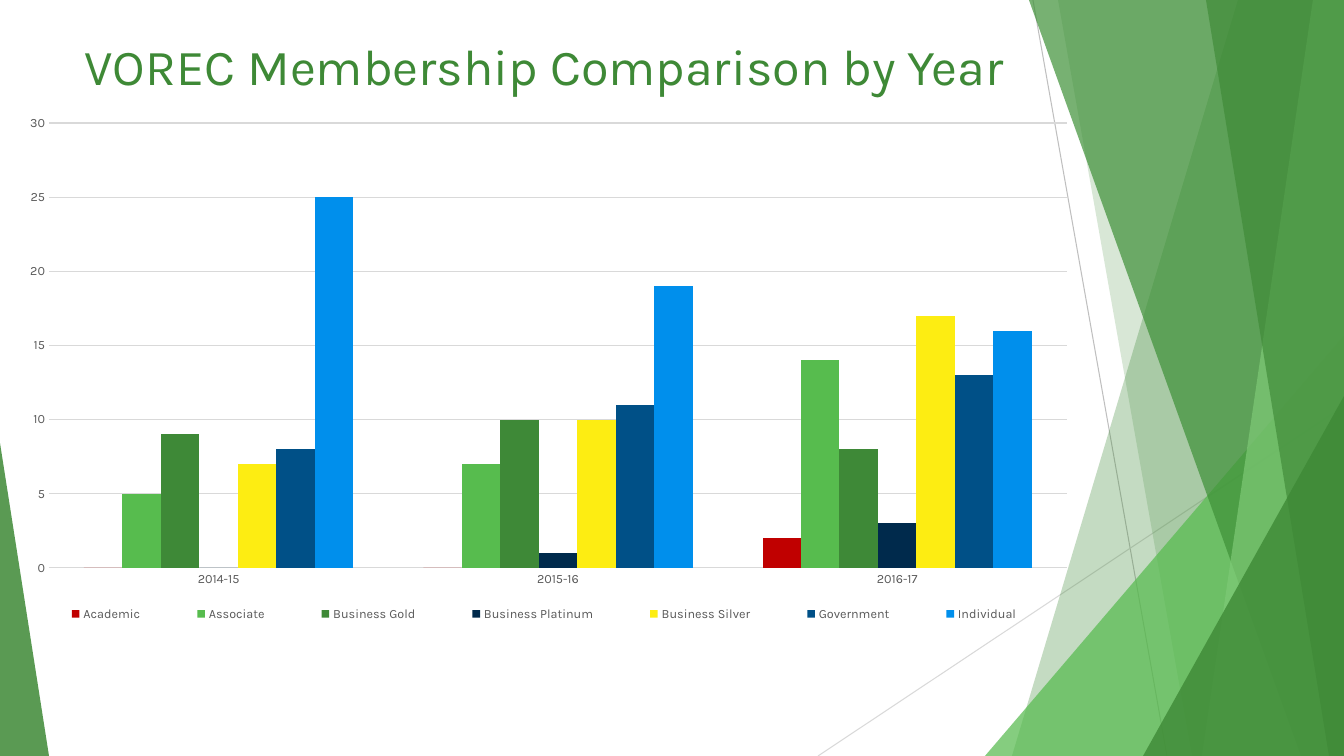
from lxml.etree import SubElement
from pptx import Presentation
from pptx.chart.data import CategoryChartData
from pptx.dml.color import RGBColor
from pptx.enum.chart import XL_CHART_TYPE as ChartType, XL_LEGEND_POSITION as LegendPosition
from pptx.enum.chart import XL_TICK_MARK as TickMark
from pptx.enum.shapes import MSO_CONNECTOR as Connector, MSO_SHAPE as Shape
from pptx.enum.text import MSO_ANCHOR as Anchor, PP_ALIGN as Align
from pptx.oxml import parse_xml
from pptx.oxml.ns import nsdecls, qn
from pptx.util import Pt

PX = 914400 / 100.8
WIDTH, HEIGHT = 1344, 756
FONT = "Karla"

FOREST = RGBColor(0x3E, 0x89, 0x36)
FERN = RGBColor(0x3E, 0x90, 0x37)
LEAF = RGBColor(0x56, 0xBB, 0x4E)
MINT = RGBColor(0x7E, 0xC9, 0x76)
GREY = RGBColor(0xBF, 0xBF, 0xBF)
PALE_GREY = RGBColor(0xD9, 0xD9, 0xD9)
TEXT_GREY = RGBColor(0x59, 0x59, 0x59)

TITLE = "VOREC Membership Comparison by Year"
TITLE_BOX = (75, 25, 947, 81)
YEARS = ["2014-15", "2015-16", "2016-17"]
MEMBERS = [
    ("Academic", (0, 0, 2), RGBColor(0xC0, 0x00, 0x00)),
    ("Associate", (5, 7, 14), RGBColor(0x57, 0xBC, 0x4E)),
    ("Business Gold", (9, 10, 8), RGBColor(0x3E, 0x89, 0x37)),
    ("Business Platinum", (0, 1, 3), RGBColor(0x00, 0x2A, 0x4C)),
    ("Business Silver", (7, 10, 17), RGBColor(0xFD, 0xED, 0x12)),
    ("Government", (8, 11, 13), RGBColor(0x00, 0x50, 0x87)),
    ("Individual", (25, 19, 16), RGBColor(0x00, 0x8F, 0xEC)),
]
CHART_BOX = (9, 106, 1080, 522)
PLOT_BOX = (49, 123, 1018, 445)
LEGEND_BOX = (19, 602, 1050, 24)

# Lines: start, end, colour
LINES = [((1033, 0), (1167, HEIGHT), GREY), ((WIDTH, 406), (818, HEIGHT), PALE_GREY)]
# Bands reach the right edge: top-left x, bottom-left x, colour, opacity in percent
BACK_BANDS = [(1238, 1012, FOREST, 30), (1058, 1192, FOREST, 20)]
FRONT_BANDS = [(1029, 1301, FERN, 70), (1313, 1202, MINT, 70), (1206, 1329, FOREST, 65)]
# Triangles stand on the bottom edge: left, top, width, apex, colour, opacity
BACK_TRIANGLES = [(985, 336, 359, 1, LEAF, 72)]
FRONT_TRIANGLES = [(1143, 396, 201, 1, FOREST, 80), (0, 443, 49, 0, FOREST, 85)]


def emu(*lengths):
    return [round(length * PX) for length in lengths]


def paint(shape, color, opacity):
    shape.shadow.inherit = False
    shape.fill.solid()
    shape.fill.fore_color.rgb = color
    shape.line.fill.background()
    color_xml = shape.fill._xPr.find(qn("a:solidFill"))[0]
    SubElement(color_xml, qn("a:alpha"), val=str(opacity * 1000))


def add_line(shapes, start, end, color):
    line = shapes.add_connector(Connector.STRAIGHT, *emu(*start, *end))
    line.line.color.rgb = color
    line.line.width = Pt(0.75)
    SubElement(line._element.spPr, qn("a:effectLst"))


def add_band(shapes, top_x, bottom_x, color, opacity):
    builder = shapes.build_freeform(top_x, 0, scale=PX)
    builder.add_line_segments([(WIDTH, 0), (WIDTH, HEIGHT), (bottom_x, HEIGHT)], close=True)
    paint(builder.convert_to_shape(), color, opacity)


def add_triangle(shapes, left, top, width, apex, color, opacity):
    box = emu(left, top, width, HEIGHT - top)
    triangle = shapes.add_shape(Shape.ISOSCELES_TRIANGLE, *box)
    triangle.adjustments[0] = apex
    paint(triangle, color, opacity)


def set_font(font, size, color):
    for name, value in {"name": FONT, "size": Pt(size)}.items():
        setattr(font, name, value)
    font.color.rgb = color


def add_title(shapes):
    frame = shapes.add_textbox(*emu(*TITLE_BOX)).text_frame
    frame.word_wrap = True
    frame.vertical_anchor = Anchor.MIDDLE
    paragraph = frame.paragraphs[0]
    paragraph.alignment = Align.LEFT
    run = paragraph.add_run()
    run.text = TITLE
    set_font(run.font, 36, FOREST)


def place_in_chart(parent, index, box, target=""):
    """Fix a chart part at a px box, written as fractions of the chart."""
    for layout in parent.findall(qn("c:layout")):
        parent.remove(layout)
    left, top, width, height = CHART_BOX
    fractions = {
        "x": (box[0] - left) / width,
        "y": (box[1] - top) / height,
        "w": box[2] / width,
        "h": box[3] / height,
    }
    layout = parse_xml(f"<c:layout {nsdecls('c')}><c:manualLayout/></c:layout>")
    manual = layout[0]
    if target:
        SubElement(manual, qn("c:layoutTarget"), val=target)
    for mode in ("xMode", "yMode"):
        SubElement(manual, qn(f"c:{mode}"), val="edge")
    for name, value in fractions.items():
        SubElement(manual, qn(f"c:{name}"), val=f"{value:.4f}")
    parent.insert(index, layout)


def add_member_chart(shapes):
    data = CategoryChartData(number_format="0")
    data.categories = YEARS
    for name, values, _ in MEMBERS:
        data.add_series(name, values)
    chart = shapes.add_chart(ChartType.COLUMN_CLUSTERED, *emu(*CHART_BOX), data).chart
    chart.has_title = False
    set_font(chart.font, 9, TEXT_GREY)

    plot = chart.plots[0]
    for name, value in {"gap_width": 182, "overlap": 0, "vary_by_categories": False}.items():
        setattr(plot, name, value)
    for series, (_, _, color) in zip(plot.series, MEMBERS):
        series.format.fill.solid()
        series.format.fill.fore_color.rgb = color

    years, counts = chart.category_axis, chart.value_axis
    for axis in (years, counts):
        axis.major_tick_mark = axis.minor_tick_mark = TickMark.NONE
        set_font(axis.tick_labels.font, 9, TEXT_GREY)
    for name, value in {"minimum_scale": 0, "maximum_scale": 30, "major_unit": 5}.items():
        setattr(counts, name, value)
    counts.format.line.fill.background()
    for line in (years.format.line, counts.major_gridlines.format.line):
        line.color.rgb = PALE_GREY
        line.width = Pt(0.75)

    chart.has_legend = True
    legend = chart.legend
    legend.position = LegendPosition.BOTTOM
    legend.include_in_layout = False
    set_font(legend.font, 9, TEXT_GREY)
    place_in_chart(legend._element, 1, LEGEND_BOX)
    place_in_chart(chart._chartSpace.chart.plotArea, 0, PLOT_BOX, "inner")


def main():
    presentation = Presentation()
    presentation.slide_width, presentation.slide_height = emu(WIDTH, HEIGHT)
    shapes = presentation.slides.add_slide(presentation.slide_layouts[6]).shapes
    for add, items in (
        (add_line, LINES),
        (add_band, BACK_BANDS),
        (add_triangle, BACK_TRIANGLES),
        (add_band, FRONT_BANDS),
        (add_triangle, FRONT_TRIANGLES),
    ):
        for item in items:
            add(shapes, *item)
    add_title(shapes)
    add_member_chart(shapes)
    presentation.save("out.pptx")


if __name__ == "__main__":
    main()
